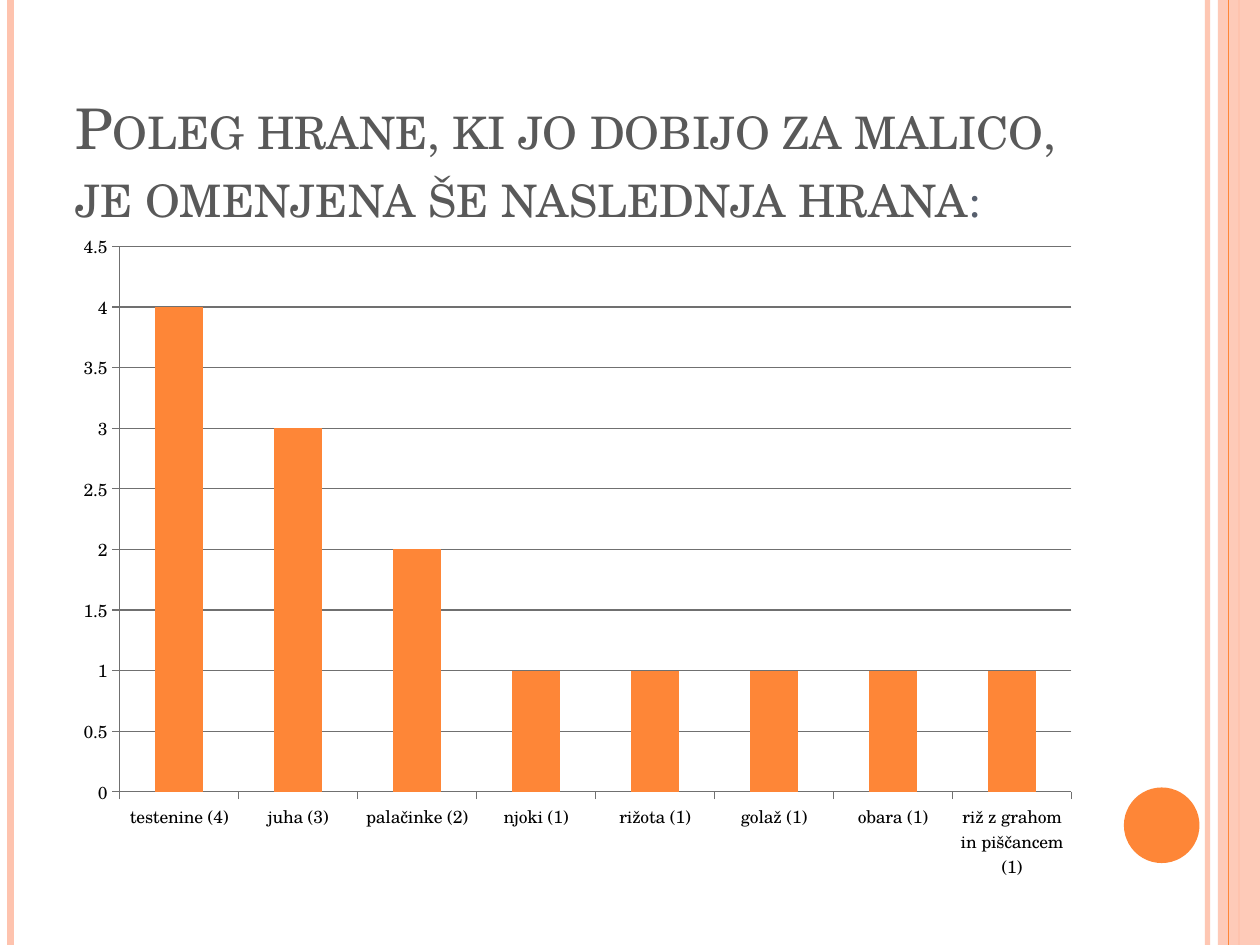
import pptx
import pptx.chart.data
import pptx.dml.color
import pptx.enum.chart
import pptx.enum.shapes
import pptx.enum.text
import pptx.oxml
import pptx.oxml.ns
import pptx.util

Pt = pptx.util.Pt
rgb = pptx.dml.color.RGBColor.from_string
qn = pptx.oxml.ns.qn

THEME = {
    "font": "TeX Gyre Schola",
    "orange": rgb("FE8637"),
    "peach": rgb("FEC3AE"),
    "title": rgb("595959"),
    "colon": rgb("575F6D"),
    "axis": rgb("707070"),
    "text": rgb("000000"),
    "title_size": Pt(32),
    "chart_size": Pt(10),
}
WIDTH, HEIGHT = 720, 540

presentation = pptx.Presentation()
presentation.slide_width, presentation.slide_height = Pt(WIDTH), Pt(HEIGHT)
slide = presentation.slides.add_slide(presentation.slide_layouts[5])


def set_alpha(properties, percent):
    """Make the first solid colour of the shape properties translucent."""
    color = next(properties.iter(qn("a:srgbClr")))
    alpha = pptx.oxml.parse_xml(
        f'<a:alpha xmlns:a="{pptx.oxml.ns.nsdecls("a").split(chr(34))[1]}" val="{percent * 1000}"/>'
    )
    color.append(alpha)


def add_rule(x, color, width, percent=100):
    """Draw a full-height vertical line."""
    rule = slide.shapes.add_connector(
        pptx.enum.shapes.MSO_CONNECTOR.STRAIGHT, Pt(x), Pt(0), Pt(x), Pt(HEIGHT))
    rule.line.color.rgb = THEME[color]
    rule.line.width = Pt(width)
    properties = rule._element.spPr
    if percent < 100:
        set_alpha(properties, percent)
    properties.append(pptx.oxml.parse_xml(f'<a:effectLst {pptx.oxml.ns.nsdecls("a")}/>'))


# Side stripes and page dot
add_rule(690, "peach", 3, 93)
add_rule(6, "peach", 4.5)
add_rule(708, "peach", 1.5)

shape_types = pptx.enum.shapes.MSO_SHAPE
for kind, box, color, percent in [
    (shape_types.RECTANGLE, (696, 0, 24, HEIGHT), "peach", 87),
    (shape_types.OVAL, (642.25, 450, 43.2, 43.2), "orange", 100),
]:
    shape = slide.shapes.add_shape(kind, *map(Pt, box))
    shape.shadow.inherit = False
    shape.fill.solid()
    shape.fill.fore_color.rgb = THEME[color]
    shape.line.fill.background()
    if percent < 100:
        set_alpha(shape._element.spPr, percent)
add_rule(702, "orange", 0.75)

# Title in small capitals
title = slide.shapes.title
for name, value in {"left": 36, "top": 21.6, "width": 588, "height": 112.5}.items():
    setattr(title, name, Pt(value))
frame_format = {
    "word_wrap": True,
    "auto_size": pptx.enum.text.MSO_AUTO_SIZE.NONE,
    "vertical_anchor": pptx.enum.text.MSO_ANCHOR.BOTTOM,
}
for name, value in frame_format.items():
    setattr(title.text_frame, name, value)
paragraph = title.text_frame.paragraphs[0]
paragraph.alignment = pptx.enum.text.PP_ALIGN.LEFT
for text, color in [
    ("Poleg hrane, ki jo dobijo za malico, je omenjena še naslednja hrana", "title"),
    (":", "colon"),
]:
    run = paragraph.add_run()
    run.text = text
    for name, value in {"name": THEME["font"], "size": THEME["title_size"]}.items():
        setattr(run.font, name, value)
    run.font.color.rgb = THEME[color]
    run._r.get_or_add_rPr().set("cap", "small")

# Column chart
foods = {
    "testenine": 4, "juha": 3, "palačinke": 2, "njoki": 1,
    "rižota": 1, "golaž": 1, "obara": 1, "riž z grahom in piščancem": 1,
}
chart_data = pptx.chart.data.CategoryChartData()
chart_data.categories = [f"{food} ({count})" for food, count in foods.items()]
chart_data.add_series("Series 1", list(foods.values()))
chart = slide.shapes.add_chart(
    pptx.enum.chart.XL_CHART_TYPE.COLUMN_CLUSTERED,
    Pt(36), Pt(126), Pt(588), Pt(384), chart_data).chart
chart.has_legend = False
chart.has_title = False
for name, value in {"name": THEME["font"], "size": THEME["chart_size"]}.items():
    setattr(chart.font, name, value)
chart.font.color.rgb = THEME["text"]

plot = chart.plots[0]
plot.gap_width = 150
plot.vary_by_categories = False
fill = plot.series[0].format.fill
fill.solid()
fill.fore_color.rgb = THEME["orange"]

# Axes and gridlines
value_axis = chart.value_axis
value_scale = {"minimum_scale": 0, "maximum_scale": 4.5, "major_unit": 0.5,
               "has_major_gridlines": True}
for name, value in value_scale.items():
    setattr(value_axis, name, value)
for axis in (chart.category_axis, value_axis):
    axis.major_tick_mark = pptx.enum.chart.XL_TICK_MARK.OUTSIDE
for part in (chart.category_axis, value_axis, value_axis.major_gridlines):
    part.format.line.color.rgb = THEME["axis"]
    part.format.line.width = Pt(0.75)

presentation.save("out.pptx")
